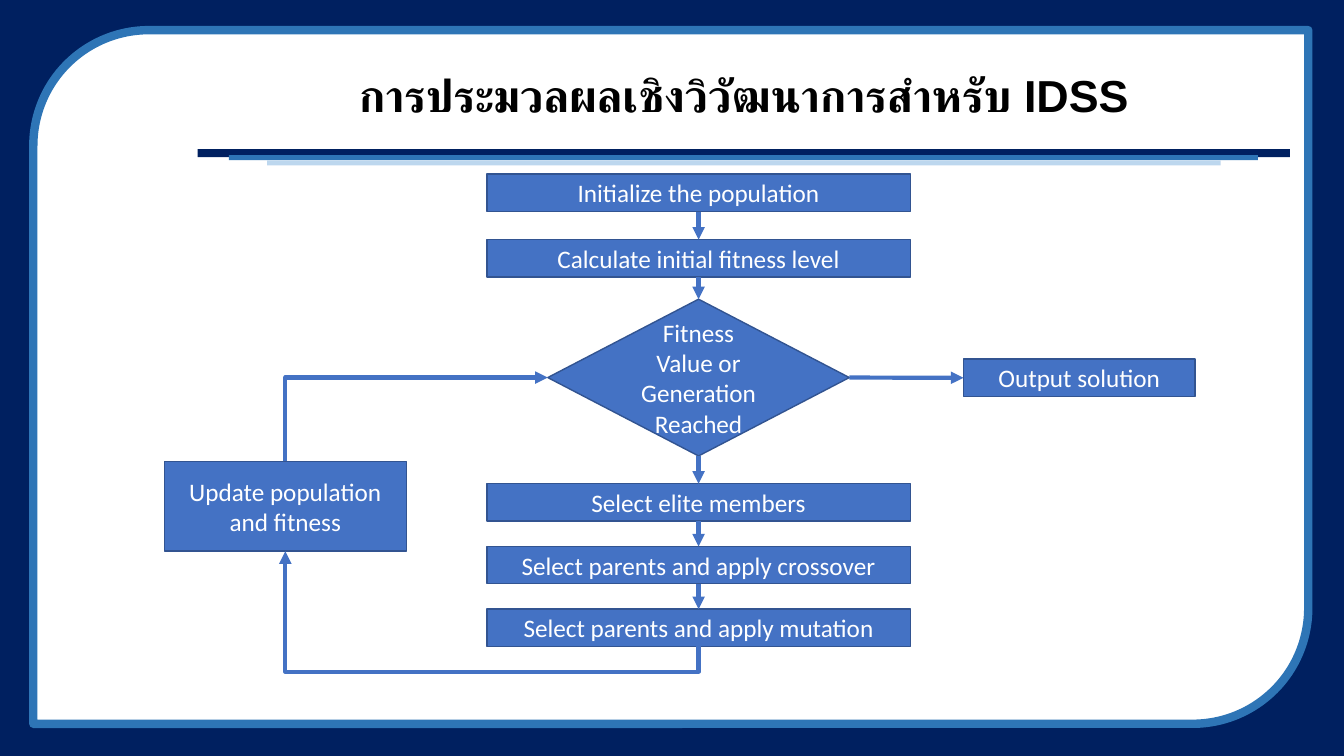
from dataclasses import dataclass
from itertools import pairwise

from lxml.etree import SubElement
from pptx import Presentation
from pptx.dml.color import RGBColor
from pptx.enum.shapes import MSO_CONNECTOR, MSO_SHAPE
from pptx.enum.text import MSO_ANCHOR, PP_ALIGN
from pptx.oxml.ns import qn
from pptx.util import Cm, Pt


@dataclass(frozen=True)
class Theme:
    navy: str = "002060"
    blue: str = "2E75B6"
    pale: str = "BDD7EE"
    white: str = "FFFFFF"
    black: str = "000000"
    step: str = "4472C4"
    step_edge: str = "325491"
    title_font: str = "Arial"
    step_font: str = "Calibri"
    title_size: int = 32
    step_size: int = 18
    frame_width: int = 6
    edge_width: int = 1
    arrow_width: int = 3


THEME = Theme()
TOP, LEFT, BOTTOM, RIGHT = range(4)  # connection sites of a box or diamond


@dataclass(frozen=True)
class Box:
    """A rectangle in centimetres."""
    left: float
    top: float
    width: float
    height: float

    def inner(self, left, top, width, height):
        return Box(self.left + left, self.top + top, width, height)

    def lengths(self):
        return [Cm(value) for value in (self.left, self.top, self.width, self.height)]


def add_block(page, box, fill, edge=None, edge_width=0, kind=MSO_SHAPE.RECTANGLE):
    block = page.shapes.add_shape(kind, *box.lengths())
    block.shadow.inherit = False
    block.fill.solid()
    block.fill.fore_color.rgb = RGBColor.from_string(fill)
    if edge:
        block.line.color.rgb = RGBColor.from_string(edge)
        block.line.width = Pt(edge_width)
    else:
        block.line.fill.background()
    return block


def write(shape, text, font, size, color, bold=False):
    frame = shape.text_frame
    frame.word_wrap = True
    frame.vertical_anchor = MSO_ANCHOR.MIDDLE
    frame.text = text
    for para in frame.paragraphs:
        para.alignment = PP_ALIGN.CENTER
        para.font.name = font
        para.font.size = Pt(size)
        para.font.bold = bold
        para.font.color.rgb = RGBColor.from_string(color)


def add_step(page, box, text, kind=MSO_SHAPE.RECTANGLE):
    step = add_block(page, box, THEME.step, THEME.step_edge, THEME.edge_width, kind)
    write(step, text, THEME.step_font, THEME.step_size, THEME.white)
    return step


def add_arrow(page, start, start_site, end, end_site, kind=MSO_CONNECTOR.STRAIGHT):
    arrow = page.shapes.add_connector(kind, 0, 0, 0, 0)
    arrow.begin_connect(start, start_site)
    arrow.end_connect(end, end_site)
    arrow.line.color.rgb = RGBColor.from_string(THEME.step)
    arrow.line.width = Pt(THEME.arrow_width)
    SubElement(arrow.line._get_or_add_ln(), qn("a:tailEnd"), type="triangle")
    SubElement(arrow._element.spPr, qn("a:effectLst"))
    return arrow


def add_upward_elbow(page, start, start_site, end, end_site, preset, bend=None):
    """Arrow to a higher point whose first leg is vertical: a bent preset turned by 90°."""
    arrow = add_arrow(page, start, start_site, end, end_site, MSO_CONNECTOR.ELBOW)
    goes_right = arrow.end_x > arrow.begin_x
    center_x = (arrow.begin_x + arrow.end_x) // 2
    center_y = (arrow.begin_y + arrow.end_y) // 2
    width, height = arrow.height, arrow.width
    arrow.left, arrow.top = center_x - width // 2, center_y - height // 2
    arrow.width, arrow.height = width, height
    transform = arrow._element.spPr.find(qn("a:xfrm"))
    transform.set("rot", str(90 * 60000))
    transform.set("flipH", "1")
    transform.set("flipV", "1" if goes_right else "0")
    geometry = arrow._element.spPr.find(qn("a:prstGeom"))
    geometry.set("prst", preset)
    if bend is not None:
        guides = geometry.find(qn("a:avLst"))
        SubElement(guides, qn("a:gd"), name="adj1", fmla=f"val {round(bend * 100000)}")


def draw_frame(page, box):
    add_block(page, box, THEME.navy)
    panel = box.inner(0.84, 0.76, 32.13, 17.48)
    add_block(page, panel, THEME.white, THEME.blue, THEME.frame_width,
              MSO_SHAPE.ROUND_2_DIAG_RECTANGLE)


def draw_heading(page, box, text):
    stripes = [(0, 2.52, 27.53, 0.2, THEME.navy),
               (0.79, 2.67, 25.93, 0.13, THEME.blue),
               (1.75, 2.8, 24.03, 0.13, THEME.pale)]
    for *place, color in stripes:
        add_block(page, box.inner(*place), color)
    title = page.shapes.add_textbox(*box.lengths())
    write(title, text, THEME.title_font, THEME.title_size, THEME.black, bold=True)
    title.text_frame.paragraphs[0].line_spacing = 0.9


def draw_flowchart(page, box):
    column, width, height = 8.13, 10.67, 0.94

    def stack(texts, top, pitch):
        return [add_step(page, box.inner(column, top + row * pitch, width, height), text)
                for row, text in enumerate(texts)]

    opening = stack(["Initialize the population", "Calculate initial fitness level"], 0, 1.65)
    decision = add_step(page, box.inner(column + (width - 7.6) / 2, 3.15, 7.6, 3.95),
                        "Fitness Value or Generation Reached", MSO_SHAPE.DIAMOND)
    breeding = stack(["Select elite members", "Select parents and apply crossover",
                      "Select parents and apply mutation"], 7.8, 1.58)
    output = add_step(page, box.inner(20.14, 4.66, 5.84, height), "Output solution")
    update = add_step(page, box.inner(0, 7.24, 6.1, 2.26), "Update population\nand fitness")

    for upper, lower in pairwise([*opening, decision, *breeding]):
        add_arrow(page, upper, BOTTOM, lower, TOP)
    add_arrow(page, decision, RIGHT, output, LEFT)
    add_upward_elbow(page, breeding[-1], BOTTOM, update, BOTTOM, "bentConnector3", -0.265)
    add_upward_elbow(page, update, TOP, decision, LEFT, "bentConnector2")


def main():
    deck = Presentation()
    deck.slide_width, deck.slide_height = Cm(33.87), Cm(19.05)
    page = deck.slides.add_slide(deck.slide_layouts[6])
    draw_frame(page, Box(0, 0, 33.87, 19.05))
    draw_heading(page, Box(4.98, 1.24, 27.53, 2.46), "การประมวลผลเชิงวิวัฒนาการสำหรับ IDSS")
    draw_flowchart(page, Box(4.14, 4.39, 25.98, 12.52))
    deck.save("out.pptx")


if __name__ == "__main__":
    main()
